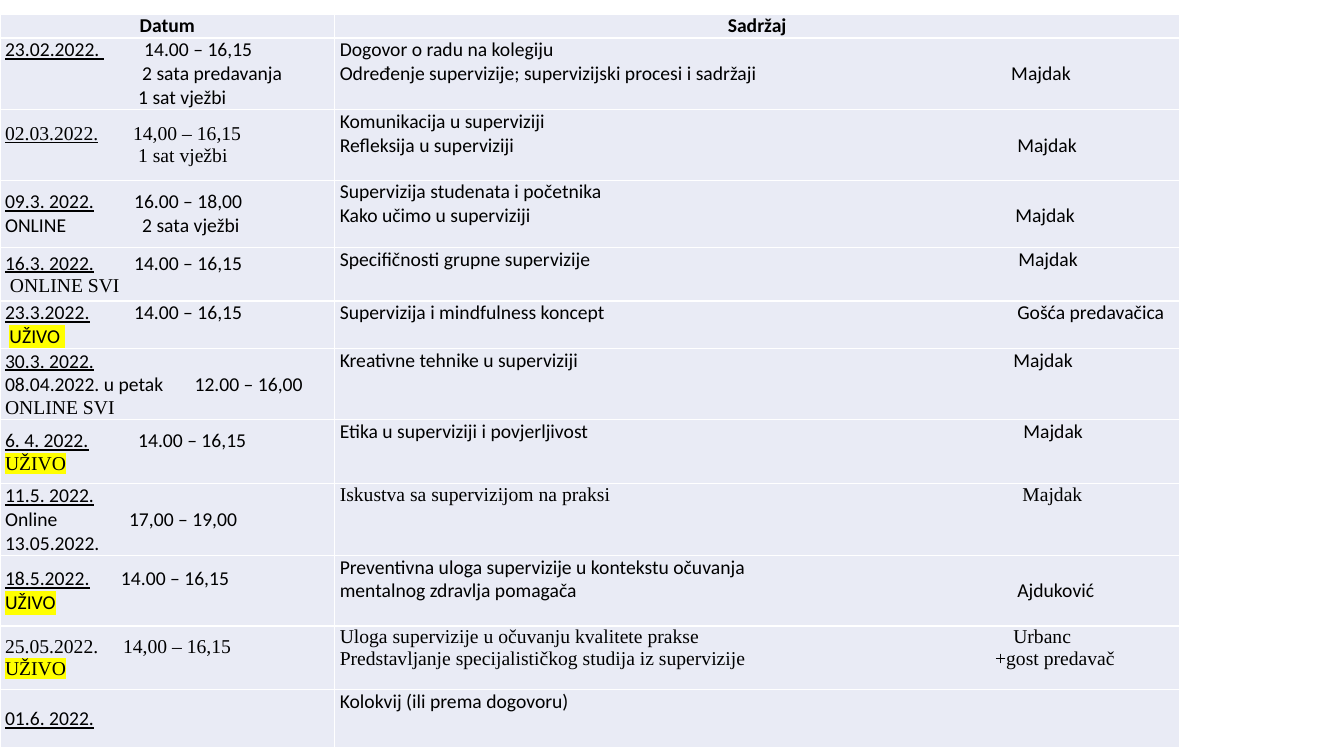
from pptx import Presentation
from pptx.dml.color import RGBColor
from pptx.enum.text import MSO_ANCHOR, PP_ALIGN
from pptx.oxml.ns import qn
from pptx.util import Inches, Pt
from lxml.etree import SubElement, Element

BLACK = RGBColor(0x00, 0x00, 0x00)
WHITE = RGBColor(0xFF, 0xFF, 0xFF)
YELLOW = RGBColor(0xFF, 0xFF, 0x00)
PALE_BLUE = RGBColor(0xE9, 0xEB, 0xF5)

COLUMNS = [3.32, 8.38]
ROWS = [0.22, 0.71, 0.7, 0.67, 0.53, 0.47, 0.7, 0.64, 0.71, 0.7, 0.63, 0.58]

# Each row holds two cells, each cell its lines, each line a tab stop and spans.
# Span marks: b bold, u underlined, t Times New Roman, h highlighted.
SCHEDULE = [
    ([(0, [("Datum", "b")])],
     [(0, [("Sadržaj", "b")])]),
    ([(1.38, [("23.02.2022. ", "u"), ("\t14.00 – 16,15", "")]),
      (1.36, [("\t2 sata predavanja", "")]),
      (1.32, [("\t1 sat vježbi", "")])],
     [(0, [("Dogovor o radu na kolegiju", "")]),
      (6.66, [("Određenje supervizije; supervizijski procesi i sadržaji\tMajdak", "")])]),
    ([(1.27, [("02.03.2022.\t", "ut"), ("14,00 – 16,15", "t")]),
      (1.32, [("\t1 sat vježbi", "t")])],
     [(0, [("Komunikacija u superviziji", "")]),
      (6.72, [("Refleksija u superviziji\tMajdak", "")])]),
    ([(1.28, [("09.3. 2022.", "u"), ("\t16.00 – 18,00", "")]),
      (1.36, [("ONLINE\t2 sata vježbi", "")])],
     [(0, [("Supervizija studenata i početnika", "")]),
      (6.7, [("Kako učimo u superviziji\tMajdak", "")])]),
    ([(1.28, [("16.3. 2022.", "u"), ("\t14.00 – 16,15", "")]),
      (0, [(" ONLINE SVI", "t")])],
     [(6.73, [("Specifičnosti grupne supervizije\tMajdak", "")])]),
    ([(1.28, [("23.3.2022.", "u"), ("\t14.00 – 16,15", "")]),
      (0, [(" ", ""), ("UŽIVO ", "h")])],
     [(6.72, [("Supervizija i mindfulness koncept\tGošća predavačica", "")])]),
    ([(0, [("30.3. 2022.", "u")]),
      (1.88, [("08.04.2022. u petak\t12.00 – 16,00", "")]),
      (0, [("ONLINE SVI", "t")])],
     [(6.68, [("Kreativne tehnike u superviziji\tMajdak", "")])]),
    ([(1.32, [("6. 4. 2022.", "u"), ("\t14.00 – 16,15", "")]),
      (0, [("UŽIVO", "th")])],
     [(6.78, [("Etika u superviziji i povjerljivost\tMajdak", "")])]),
    ([(0, [("11.5. 2022.", "u")]),
      (1.23, [("Online\t17,00 – 19,00", "")]),
      (0, [("13.05.2022.", "")])],
     [(6.77, [("Iskustva sa supervizijom na praksi\tMajdak", "t")])]),
    ([(1.15, [("18.5.2022.", "u"), ("\t14.00 – 16,15", "")]),
      (0, [("UŽIVO", "h")])],
     [(0, [("Preventivna uloga supervizije u kontekstu očuvanja", "")]),
      (6.72, [("mentalnog zdravlja pomagača\tAjduković", "")])]),
    ([(1.17, [("25.05.2022.\t14,00 – 16,15", "t")]),
      (0, [("UŽIVO", "th")])],
     [(6.68, [("Uloga supervizije u očuvanju kvalitete prakse\tUrbanc", "t")]),
      (6.5, [("Predstavljanje specijalističkog studija iz supervizije\t+gost predavač", "t")])]),
    ([(0, [("01.6. 2022.", "u")])],
     [(0, [("Kolokvij (ili prema dogovoru)", "")])]),
]


def write_line(para, tab_stop, spans):
    if tab_stop:
        tabs = SubElement(para._p.get_or_add_pPr(), qn("a:tabLst"))
        SubElement(tabs, qn("a:tab"), pos=str(Inches(tab_stop)), algn="l")
    for text, marks in spans:
        span = para.add_run()
        span.text = text
        look = {"size": Pt(14), "bold": "b" in marks, "underline": "u" in marks,
                "name": "Times New Roman" if "t" in marks else "Calibri"}
        for key, value in look.items():
            setattr(span.font, key, value)
        span.font.color.rgb = BLACK
        if "h" in marks:
            highlight = Element(qn("a:highlight"))
            SubElement(highlight, qn("a:srgbClr"), val=str(YELLOW))
            span.font._element.find(qn("a:solidFill")).addnext(highlight)


def style_cell(cell, anchor):
    layout = {"margin_left": Inches(0.05), "margin_right": Inches(0.05),
              "margin_top": 0, "margin_bottom": 0, "vertical_anchor": anchor}
    for key, value in layout.items():
        setattr(cell, key, value)
    cell.fill.solid()
    cell.fill.fore_color.rgb = PALE_BLUE
    # White border on all four sides, placed ahead of the fill
    properties = cell._tc.get_or_add_tcPr()
    for order, side in enumerate("LRTB"):
        border = Element(qn("a:ln" + side), w=str(Pt(1)))
        fill = SubElement(border, qn("a:solidFill"))
        SubElement(fill, qn("a:srgbClr"), val=str(WHITE))
        properties.insert(order, border)


deck = Presentation()
deck.slide_width, deck.slide_height = Inches(13.33), Inches(7.5)
page = deck.slides.add_slide(deck.slide_layouts[6])

# Schedule table
table = page.shapes.add_table(len(ROWS), len(COLUMNS), 0, Inches(0.14),
                              Inches(sum(COLUMNS)), Inches(sum(ROWS))).table
table.horz_banding = False
for column, width in zip(table.columns, COLUMNS):
    column.width = Inches(width)
for row, height in zip(table.rows, ROWS):
    row.height = Inches(height)

# Cell contents: dates centred vertically, topics at the top
for r, cells in enumerate(SCHEDULE):
    for c, lines in enumerate(cells):
        cell = table.cell(r, c)
        header = r == 0
        style_cell(cell, MSO_ANCHOR.MIDDLE if header or c == 0 else MSO_ANCHOR.TOP)
        for number, (tab_stop, spans) in enumerate(lines):
            frame = cell.text_frame
            para = frame.add_paragraph() if number else frame.paragraphs[0]
            para.alignment = PP_ALIGN.CENTER if header else PP_ALIGN.LEFT
            write_line(para, tab_stop, spans)

deck.save("out.pptx")
